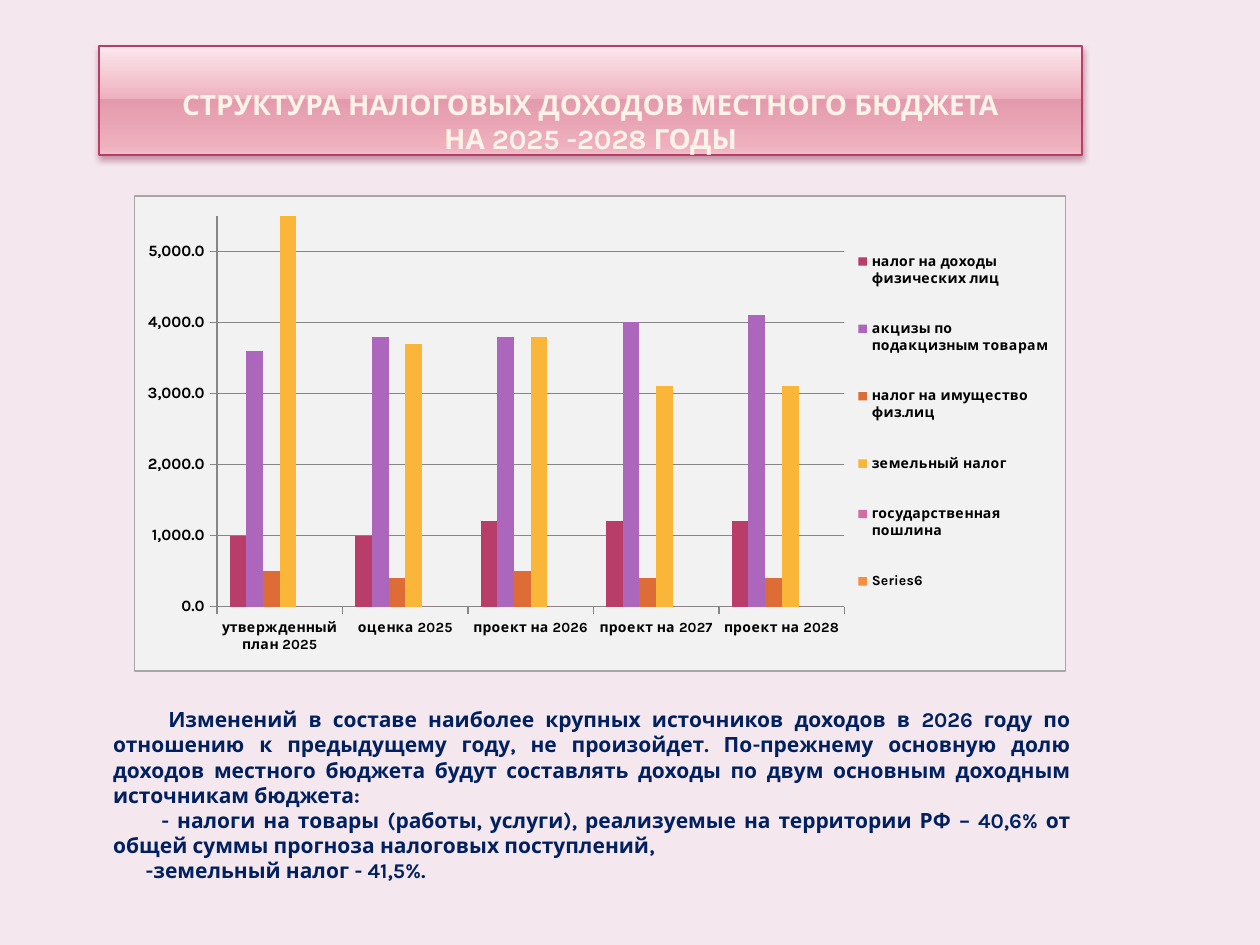
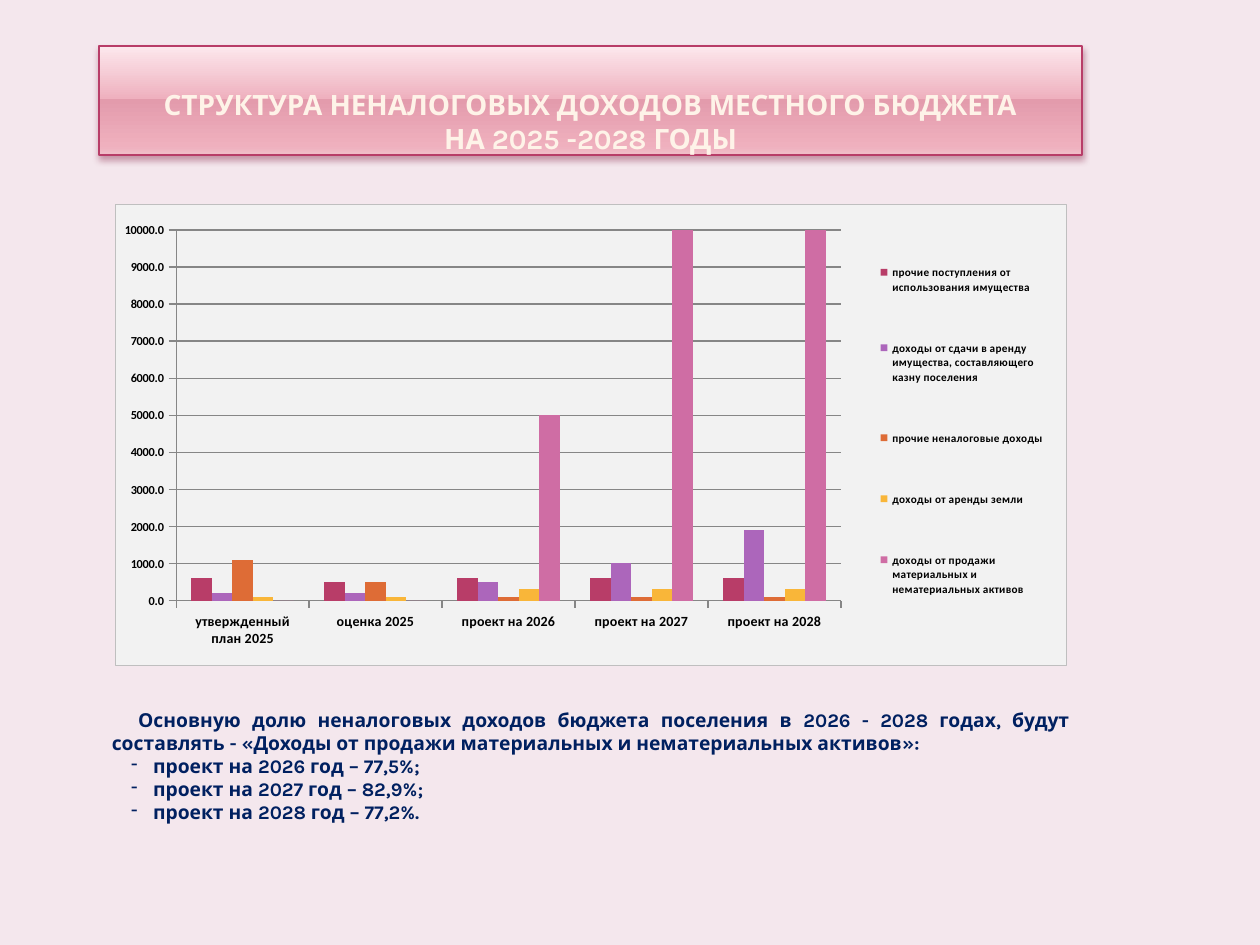
from pptx import Presentation
from pptx.chart.data import CategoryChartData
from pptx.dml.color import RGBColor
from pptx.enum.chart import XL_CHART_TYPE as ChartType, XL_LEGEND_POSITION as LegendPosition
from pptx.enum.chart import XL_TICK_MARK as TickMark
from pptx.enum.text import MSO_ANCHOR as Anchor, MSO_AUTO_SIZE as AutoSize, PP_ALIGN as Align
from pptx.oxml import parse_xml
from pptx.oxml.ns import nsdecls, qn
from pptx.util import Pt

BACKGROUND = RGBColor(0xF4, 0xE7, 0xED)
BERRY = RGBColor(0xB8, 0x3D, 0x68)
PURPLE = RGBColor(0xAC, 0x66, 0xBB)
ORANGE = RGBColor(0xDE, 0x6C, 0x36)
YELLOW = RGBColor(0xF9, 0xB6, 0x39)
PINK = RGBColor(0xCF, 0x6D, 0xA4)
APRICOT = RGBColor(0xFA, 0x8D, 0x3D)
CREAM = RGBColor(0xFE, 0xF3, 0xE8)
NAVY = RGBColor(0x00, 0x20, 0x60)
BLACK = RGBColor(0x00, 0x00, 0x00)
GRID_GREY = RGBColor(0x86, 0x86, 0x86)
PANEL = RGBColor(0xF2, 0xF2, 0xF2)
TAX_BORDER = RGBColor(0xA6, 0xA6, 0xA6)
NONTAX_BORDER = RGBColor(0xBF, 0xBF, 0xBF)
SHADOW = RGBColor(0x7F, 0x12, 0x38)
BAND_STOPS = [
    (0, RGBColor(0xFC, 0xE8, 0xED)),
    (49, RGBColor(0xEF, 0xB0, 0xBE)),
    (49, RGBColor(0xE3, 0x9B, 0xAC)),
    (92, RGBColor(0xEF, 0xB0, 0xBE)),
    (100, RGBColor(0xF0, 0xBE, 0xC9)),
]
SERIES_COLORS = [BERRY, PURPLE, ORANGE, YELLOW, PINK, APRICOT]
FONT = "Karla"
CATEGORIES = ["утвержденный план 2025", "оценка 2025", "проект на 2026",
              "проект на 2027", "проект на 2028"]
TAX_SERIES = [
    ("налог на доходы физических лиц", (1000, 1000, 1200, 1200, 1200)),
    ("акцизы по подакцизным товарам", (3600, 3800, 3800, 4000, 4100)),
    ("налог на имущество физ.лиц", (500, 400, 500, 400, 400)),
    ("земельный налог", (5800, 3700, 3800, 3100, 3100)),
    ("государственная пошлина", (0, 0, 0, 0, 0)),
    ("Series6", (None,) * 5),
]
NONTAX_SERIES = [
    ("прочие поступления от использования имущества", (600, 500, 600, 600, 600)),
    ("доходы от сдачи в аренду имущества, составляющего казну поселения",
     (200, 200, 500, 1000, 1900)),
    ("прочие неналоговые доходы", (1100, 500, 100, 100, 100)),
    ("доходы от аренды земли", (100, 100, 300, 300, 300)),
    ("доходы от продажи материальных и нематериальных активов",
     (0, 0, 5000, 10000, 10000)),
]


def set_font(font, name, size, color, bold=True):
    font.name = name
    font.size = Pt(size)
    font.bold = bold
    font.color.rgb = color


def style_band(shape):
    stops = "".join(
        f'<a:gs pos="{position * 1000}"><a:srgbClr val="{color}"/></a:gs>'
        for position, color in BAND_STOPS)
    properties = shape.element.spPr
    properties.append(parse_xml(
        f'<a:gradFill {nsdecls("a")} rotWithShape="1"><a:gsLst>{stops}</a:gsLst>'
        '<a:lin ang="5400000" scaled="0"/></a:gradFill>'))
    shape.line.color.rgb = BERRY
    shape.line.width = Pt(0.9)
    properties.append(parse_xml(
        f'<a:effectLst {nsdecls("a")}><a:outerShdw blurRad="{Pt(4)}" dist="{Pt(2)}" '
        f'dir="5400000" rotWithShape="0"><a:srgbClr val="{SHADOW}">'
        '<a:alpha val="38000"/></a:srgbClr></a:outerShdw></a:effectLst>'))


def add_titled_slide(presentation, subject):
    slide = presentation.slides.add_slide(presentation.slide_layouts[5])
    title = slide.shapes.title
    title.left, title.top, title.width, title.height = Pt(56.7), Pt(26.2), Pt(561.6), Pt(62.4)
    style_band(title)
    frame = title.text_frame
    frame.word_wrap = True
    frame.auto_size = AutoSize.NONE
    frame.vertical_anchor = Anchor.BOTTOM
    frame.margin_left = frame.margin_right = Pt(3.6)
    frame.margin_top = frame.margin_bottom = 0
    frame.text = f"СТРУКТУРА {subject} МЕСТНОГО БЮДЖЕТА\vНА 2025 -2028 ГОДЫ"
    paragraph = frame.paragraphs[0]
    paragraph.alignment = Align.CENTER
    set_font(paragraph.font, FONT, 16, CREAM)
    return slide


def set_layout(parent, index, bounds, target=""):
    for old_layout in parent.findall(qn("c:layout")):
        parent.remove(old_layout)
    x, y, width, height = bounds
    parent.insert(index, parse_xml(
        f'<c:layout {nsdecls("c")}><c:manualLayout>{target}'
        '<c:xMode val="edge"/><c:yMode val="edge"/>'
        f'<c:x val="{x}"/><c:y val="{y}"/><c:w val="{width}"/><c:h val="{height}"/>'
        '</c:manualLayout></c:layout>'))


def style_axis(axis, font_name, size):
    axis.major_tick_mark = TickMark.OUTSIDE
    axis.minor_tick_mark = TickMark.NONE
    axis.format.line.color.rgb = GRID_GREY
    axis.format.line.width = Pt(0.75)
    set_font(axis.tick_labels.font, font_name, size, BLACK)


def add_column_chart(slide, box, series_rows, font_name, value_size, legend_size,
                     maximum, number_format, border, plot_bounds, legend_bounds):
    data = CategoryChartData()
    data.categories = CATEGORIES
    for name, values in series_rows:
        data.add_series(name, values)
    chart = slide.shapes.add_chart(
        ChartType.COLUMN_CLUSTERED, *[Pt(length) for length in box], data).chart
    chart.has_title = False
    set_font(chart.font, font_name, 10, BLACK, False)

    style_axis(chart.category_axis, font_name, 8)
    axis = chart.value_axis
    style_axis(axis, font_name, value_size)
    axis.minimum_scale, axis.maximum_scale, axis.major_unit = 0, maximum, 1000
    axis.has_major_gridlines = True
    axis.major_gridlines.format.line.color.rgb = GRID_GREY
    axis.major_gridlines.format.line.width = Pt(0.75)
    axis.tick_labels.number_format = number_format
    axis.tick_labels.number_format_is_linked = False

    plot = chart.plots[0]
    plot.gap_width = 150
    plot.overlap = 0
    plot.vary_by_categories = False
    for series, color in zip(plot.series, SERIES_COLORS):
        series.format.fill.solid()
        series.format.fill.fore_color.rgb = color
        series.invert_if_negative = False

    chart.has_legend = True
    chart.legend.position = LegendPosition.RIGHT
    chart.legend.include_in_layout = False
    set_font(chart.legend.font, font_name, legend_size, BLACK)

    chart_root = chart.element.find(qn("c:chart"))
    set_layout(chart_root.find(qn("c:plotArea")), 0, plot_bounds,
               '<c:layoutTarget val="inner"/>')
    set_layout(chart_root.find(qn("c:legend")), 1, legend_bounds)
    chart_root.addnext(parse_xml(
        f'<c:spPr {nsdecls("c", "a")}><a:solidFill><a:srgbClr val="{PANEL}"/></a:solidFill>'
        f'<a:ln w="{Pt(0.75)}"><a:solidFill><a:srgbClr val="{border}"/></a:solidFill></a:ln>'
        '</c:spPr>'))


def add_commentary(slide, left, top, size, entries):
    box = slide.shapes.add_textbox(Pt(left), Pt(top), Pt(561.6), Pt(95))
    frame = box.text_frame
    frame.word_wrap = True
    for index, (text, margin, indent, dashed) in enumerate(entries):
        paragraph = frame.paragraphs[0] if index == 0 else frame.add_paragraph()
        paragraph.text = text
        paragraph.alignment = Align.JUSTIFY
        properties = paragraph._p.get_or_add_pPr()
        properties.set("marL", str(Pt(margin)))
        properties.set("indent", str(Pt(indent)))
        if dashed:
            properties.append(parse_xml(f'<a:buChar {nsdecls("a")} char="-"/>'))
        set_font(paragraph.font, FONT, size, NAVY)


def main():
    presentation = Presentation()
    presentation.slide_width, presentation.slide_height = Pt(720), Pt(540)
    background = presentation.slide_master.background.fill
    background.solid()
    background.fore_color.rgb = BACKGROUND

    tax_slide = add_titled_slide(presentation, "НАЛОГОВЫХ ДОХОДОВ")
    add_commentary(tax_slide, 57.6, 400.3, 12, [
        ("Изменений в составе наиболее крупных источников доходов в 2026 году по отношению "
         "к предыдущему году, не произойдет. По-прежнему основную долю доходов местного "
         "бюджета будут составлять доходы по двум основным доходным источникам бюджета:",
         0, 31.5, False),
        ("- налоги на товары (работы, услуги), реализуемые на территории РФ – 40,6% от общей "
         "суммы прогноза налоговых поступлений,", 0, 27.5, False),
        ("-земельный налог - 41,5%.", 0, 18.5, False),
    ])
    add_column_chart(tax_slide, (76.3, 111.6, 532.8, 272.2), TAX_SERIES, FONT, 9, 8,
                     5500, "#,##0.0", TAX_BORDER,
                     (0.089, 0.042, 0.674, 0.823), (0.775, 0.05, 0.21, 0.85))

    nontax_slide = add_titled_slide(presentation, "НЕНАЛОГОВЫХ ДОХОДОВ")
    add_commentary(nontax_slide, 56.9, 401, 11, [
        ("Основную долю неналоговых доходов бюджета поселения в 2026 - 2028 годах, будут "
         "составлять - «Доходы от продажи материальных и нематериальных активов»:",
         0, 15, False),
        *[(f"проект на {year} год – {share}%;".replace("77,2%;", "77,2%."), 23.5, -12.5, True)
          for year, share in ((2026, "77,5"), (2027, "82,9"), (2028, "77,2"))],
    ])
    add_column_chart(nontax_slide, (65.5, 116.6, 544.3, 264.2), NONTAX_SERIES, "Calibri", 7, 6.4,
                     10000, "0.0", NONTAX_BORDER,
                     (0.064, 0.055, 0.699, 0.804), (0.795, 0.03, 0.19, 0.92))

    presentation.save("out.pptx")


if __name__ == "__main__":
    main()
